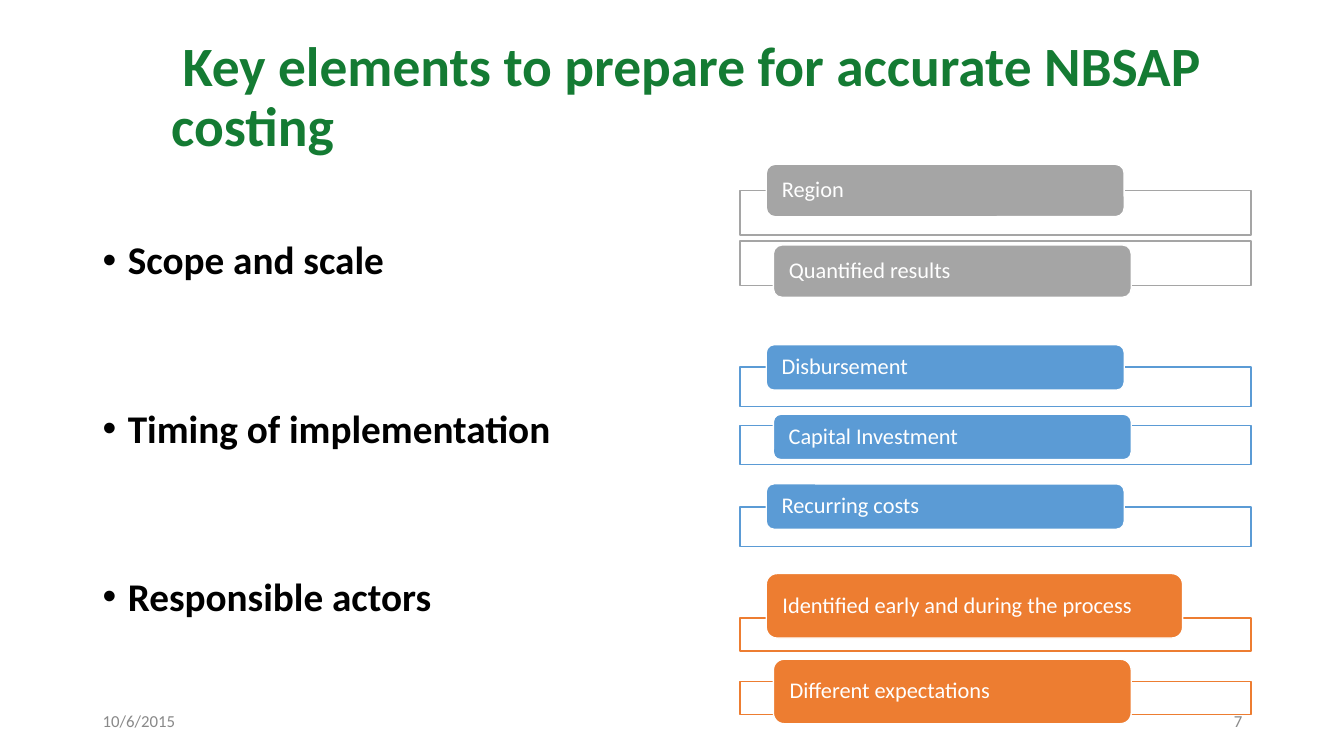
"""Build the slide on key elements for accurate NBSAP costing."""
from dataclasses import dataclass

from lxml import etree
from pptx import Presentation
from pptx.dml.color import RGBColor
from pptx.enum.shapes import MSO_SHAPE as Preset
from pptx.enum.text import MSO_ANCHOR as Anchor, PP_ALIGN as Align
from pptx.oxml.ns import qn
from pptx.shapes.group import GroupShape
from pptx.slide import Slide
from pptx.text.text import TextFrame, _Paragraph as Paragraph
from pptx.util import Inches, Pt

FRAME_LEFT, FRAME_WIDTH = 7.34, 5.07
LABEL_LEFTS = (7.6, 7.67)
LABEL_WIDTH = 3.55
TEXT_INSET = 0.13


@dataclass(frozen=True)
class Item:
    text: str
    frame_top: float
    label_top: float
    label_width: float = LABEL_WIDTH


@dataclass(frozen=True)
class ItemGroup:
    color: str
    frame_height: float
    label_height: float
    items: tuple[Item, ...]


@dataclass(frozen=True)
class Footer:
    text: str
    left: float
    align: Align


ITEM_GROUPS = (
    ItemGroup("5B9BD5", 0.39, 0.45, (
        Item("Disbursement", 3.64, 3.42),
        Item("Capital Investment", 4.22, 4.11),
        Item("Recurring costs", 5.03, 4.8),
    )),
    ItemGroup("ED7D31", 0.33, 0.64, (
        Item("Identified early and during the process", 6.13, 5.69, 4.13),
        Item("Different expectations", 6.76, 6.54),
    )),
    ItemGroup("A5A5A5", 0.44, 0.52, (
        Item("Region", 1.89, 1.63),
        Item("Quantified results", 2.39, 2.43),
    )),
)
TOPICS = ("Scope and scale", "Timing of implementation", "Responsible actors")
FOOTERS = (Footer("10/6/2015", 0.92, Align.LEFT), Footer("7", 9.42, Align.RIGHT))


def rgb(color: str) -> RGBColor:
    return RGBColor.from_string(color)


def add_run(paragraph: Paragraph, text: str, size: float, color: str, bold: bool = False) -> None:
    run = paragraph.add_run()
    run.text = text
    run.font.name = "Calibri"
    run.font.size = Pt(size)
    run.font.bold = bold
    run.font.color.rgb = rgb(color)


def add_text_frame(slide: Slide, left: float, top: float, width: float, height: float,
                   anchor: Anchor) -> TextFrame:
    box = slide.shapes.add_textbox(Inches(left), Inches(top), Inches(width), Inches(height))
    frame = box.text_frame
    frame.word_wrap = True
    frame.vertical_anchor = anchor
    return frame


def add_title(slide: Slide) -> None:
    paragraph = add_text_frame(slide, 1.6, 0.35, 11.73, 1.25, Anchor.MIDDLE).paragraphs[0]
    paragraph.line_spacing = 0.9
    add_run(paragraph, " ", 36, "147B33", bold=True)
    add_run(paragraph, "Key elements to prepare for accurate NBSAP costing", 39.6, "147B33", bold=True)


def add_bullet(paragraph: Paragraph) -> None:
    properties = paragraph._p.get_or_add_pPr()
    properties.set("marL", str(Inches(0.25)))
    properties.set("indent", str(Inches(-0.25)))
    etree.SubElement(properties, qn("a:buFont"), typeface="Arial")
    etree.SubElement(properties, qn("a:buChar"), char="•")


def add_topics(slide: Slide) -> None:
    frame = add_text_frame(slide, 0.92, 1.94, 11.5, 5.41, Anchor.TOP)
    frame.margin_top = Inches(0.45)
    for index, topic in enumerate(TOPICS):
        paragraph = frame.add_paragraph() if index else frame.paragraphs[0]
        paragraph.line_spacing = 0.9
        paragraph.space_before = Pt(90 if index else 0)
        add_bullet(paragraph)
        add_run(paragraph, topic, 28, "000000", bold=True)


def add_footer(slide: Slide, footer: Footer) -> None:
    paragraph = add_text_frame(slide, footer.left, 6.95, 3, 0.4, Anchor.MIDDLE).paragraphs[0]
    paragraph.alignment = footer.align
    add_run(paragraph, footer.text, 12, "898989")


def add_block(group: GroupShape, preset: Preset, left: float, top: float, width: float,
              height: float, fill: str, line: str):
    shape = group.shapes.add_shape(preset, Inches(left), Inches(top), Inches(width), Inches(height))
    shape.shadow.inherit = False
    shape.fill.solid()
    shape.fill.fore_color.rgb = rgb(fill)
    shape.line.color.rgb = rgb(line)
    shape.line.width = Pt(1)
    return shape


def add_item_group(slide: Slide, item_group: ItemGroup) -> None:
    group = slide.shapes.add_group_shape()
    for index, item in enumerate(item_group.items):
        frame = add_block(group, Preset.RECTANGLE, FRAME_LEFT, item.frame_top, FRAME_WIDTH,
                          item_group.frame_height, "FFFFFF", item_group.color)
        fill_color = frame._element.spPr.find(f"{qn('a:solidFill')}/{qn('a:srgbClr')}")
        etree.SubElement(fill_color, qn("a:alpha"), val="90000")

        label = add_block(group, Preset.ROUNDED_RECTANGLE, LABEL_LEFTS[index % 2], item.label_top,
                          item.label_width, item_group.label_height, item_group.color, "FFFFFF")
        text_frame = label.text_frame
        text_frame.word_wrap = True
        text_frame.vertical_anchor = Anchor.MIDDLE
        text_frame.margin_left = text_frame.margin_right = Inches(TEXT_INSET)
        text_frame.margin_top = text_frame.margin_bottom = 0
        paragraph = text_frame.paragraphs[0]
        paragraph.alignment = Align.LEFT
        paragraph.line_spacing = 0.9
        add_run(paragraph, item.text, 16, "FFFFFF")


def main() -> None:
    presentation = Presentation()
    presentation.slide_width = Inches(13.33)
    presentation.slide_height = Inches(7.5)
    slide = presentation.slides.add_slide(presentation.slide_layouts[6])
    add_title(slide)
    add_topics(slide)
    for footer in FOOTERS:
        add_footer(slide, footer)
    for item_group in ITEM_GROUPS:
        add_item_group(slide, item_group)
    presentation.save("out.pptx")


if __name__ == "__main__":
    main()
